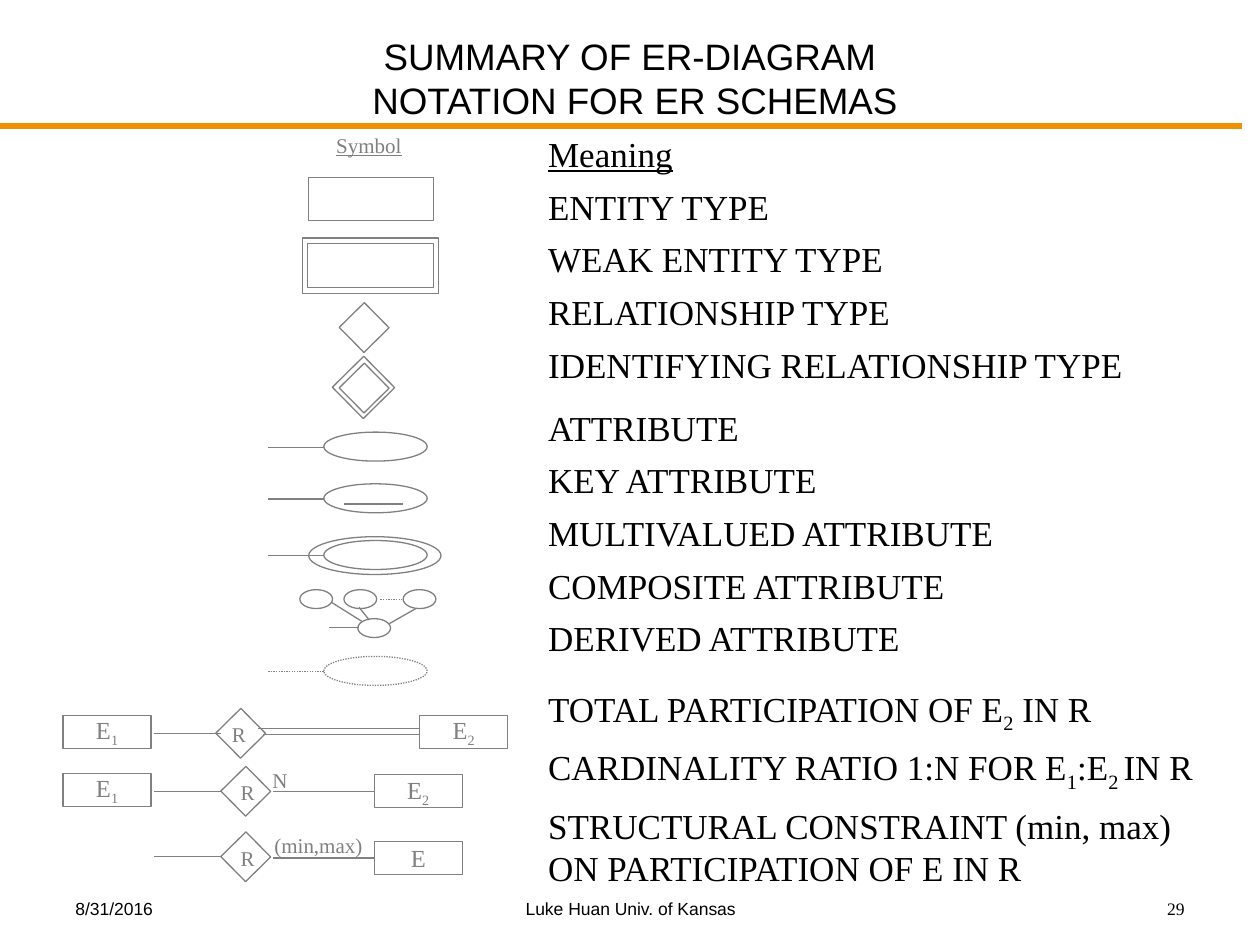
from lxml import etree
from pptx import Presentation
from pptx.dml.color import RGBColor
from pptx.enum.dml import MSO_LINE
from pptx.enum.shapes import MSO_CONNECTOR, MSO_SHAPE
from pptx.enum.text import MSO_ANCHOR, MSO_AUTO_SIZE, PP_ALIGN
from pptx.oxml.ns import qn
from pptx.util import Inches, Pt

RECT, OVAL = MSO_SHAPE.RECTANGLE, MSO_SHAPE.OVAL
STRAIGHT = MSO_CONNECTOR.STRAIGHT
DOTTED = MSO_LINE.ROUND_DOT
LEFT, CENTER, RIGHT = PP_ALIGN.LEFT, PP_ALIGN.CENTER, PP_ALIGN.RIGHT
LEFT_SIDE = 1
SANS, SERIF = "Arial", "Times New Roman"
COLORS = {"text": "000000", "symbol": "808080", "rule": "EF9100"}

ENTITY_SIZE = (0.7, 0.26)
OVAL_SIZE = (0.82, 0.23)
DIAMOND_SIDE = 0.28
SYMBOL_LEFT = 2.13
ROW_GAP, GROUP_GAP, WIDE_GAP = 6.1, 12.1, 16.1

# Text with subscripts between underscores, and points of space before
MEANINGS = [
    ("Meaning", ROW_GAP),
    ("ENTITY TYPE", ROW_GAP),
    ("WEAK ENTITY TYPE", ROW_GAP),
    ("RELATIONSHIP TYPE", ROW_GAP),
    ("IDENTIFYING RELATIONSHIP TYPE", ROW_GAP),
    ("ATTRIBUTE", GROUP_GAP),
    ("KEY ATTRIBUTE", ROW_GAP),
    ("MULTIVALUED ATTRIBUTE", ROW_GAP),
    ("COMPOSITE ATTRIBUTE", ROW_GAP),
    ("DERIVED ATTRIBUTE", ROW_GAP),
    ("TOTAL PARTICIPATION OF E_2_ IN R", WIDE_GAP),
    ("CARDINALITY RATIO 1:N FOR E_1_:E_2 _IN R", ROW_GAP),
    ("STRUCTURAL CONSTRAINT (min, max) ON PARTICIPATION OF E IN R", ROW_GAP),
]


def write(para, text, size, color="symbol", font=SERIF, align=LEFT):
    """Fill a paragraph, lowering the parts between underscores and breaking lines at newlines."""
    para.alignment = align
    para.font.size = Pt(size)
    para.font.name = font
    para.font.color.rgb = RGBColor.from_string(COLORS[color])
    for row, line in enumerate(text.split("\n")):
        if row:
            para.add_line_break()
        for index, part in enumerate(line.split("_")):
            if part:
                span = para.add_run()
                span.text = part
                if index % 2:
                    span._r.get_or_add_rPr().set("baseline", "-25000")


def place(shape, left, top, width, height):
    shape.left, shape.top = Inches(left), Inches(top)
    shape.width, shape.height = Inches(width), Inches(height)


def add_label(page, text, left, top, width, height, size=12, wrap=False, inset=0.05, **style):
    box = page.shapes.add_textbox(Inches(left), Inches(top), Inches(width), Inches(height))
    frame = box.text_frame
    frame.word_wrap = wrap
    frame.margin_top = frame.margin_bottom = Inches(inset)
    write(frame.paragraphs[0], text, size, **style)
    return box


def add_outline(page, kind, left, top, width, height, dash=None):
    shape = page.shapes.add_shape(kind, Inches(left), Inches(top), Inches(width), Inches(height))
    shape.shadow.inherit = False
    shape.fill.background()
    shape.line.color.rgb = RGBColor.from_string(COLORS["symbol"])
    shape.line.width = Pt(0.75)
    shape.line.dash_style = dash
    return shape


def add_line(page, x1, y1, x2, y2, dash=None, color="symbol", width=0.75):
    line = page.shapes.add_connector(STRAIGHT, Inches(x1), Inches(y1), Inches(x2), Inches(y2))
    line.line.color.rgb = RGBColor.from_string(COLORS[color])
    line.line.width = Pt(width)
    line.line.dash_style = dash
    etree.SubElement(line._element.spPr, qn("a:effectLst"))
    return line


def add_diamond(page, left, top, side=DIAMOND_SIDE):
    """A square turned on its corner; the box is that of the unturned square."""
    add_outline(page, RECT, left, top, side, side).rotation = 45.4


def add_entity(page, text, left, top):
    entity = add_outline(page, RECT, left, top, *ENTITY_SIZE)
    entity.text_frame.word_wrap = False
    entity.text_frame.vertical_anchor = MSO_ANCHOR.MIDDLE
    write(entity.text_frame.paragraphs[0], text, 14, align=CENTER)
    return entity


def draw_header(page, left, top, width, height):
    title = page.shapes.title
    place(title, left, top, width, height)
    frame = title.text_frame
    frame.auto_size = MSO_AUTO_SIZE.NONE
    frame.vertical_anchor = MSO_ANCHOR.MIDDLE
    frame.margin_top, frame.margin_bottom = 0, Inches(0.05)
    write(frame.paragraphs[0], "SUMMARY OF ER-DIAGRAM \nNOTATION FOR ER SCHEMAS", 21,
          color="text", font=SANS, align=CENTER)
    add_line(page, 0, 1, 9.86, 1, color="rule", width=3)


def draw_meanings(page, left, top, width, height):
    body = page.placeholders[1]
    place(body, left, top, width, height)
    frame = body.text_frame
    frame.auto_size = MSO_AUTO_SIZE.NONE
    for index, (text, gap) in enumerate(MEANINGS):
        para = frame.add_paragraph() if index else frame.paragraphs[0]
        para.space_before = Pt(gap)
        write(para, text, 20, color="text")
        props = para._p.get_or_add_pPr()
        props.set("marL", "0")
        props.set("indent", "0")
        props.insert_element_before(props.makeelement(qn("a:buNone"), {}), "a:tabLst", "a:defRPr")
    frame.paragraphs[0].font.underline = True


def draw_types(page, left, top):
    """Heading, entity and relationship symbols, plain and doubled."""
    heading = add_label(page, "Symbol", left + 0.17, top, 0.72, 0.2, inset=0)
    heading.text_frame.paragraphs[0].font.underline = True
    add_outline(page, RECT, left + 0.05, top + 0.36, 0.99, 0.34)
    add_outline(page, RECT, left + 0.04, top + 0.88, 1, 0.35)
    add_outline(page, RECT, left, top + 0.84, 1.08, 0.44)
    add_diamond(page, left + 0.35, top + 1.41)
    add_diamond(page, left + 0.35, top + 1.89)
    add_diamond(page, left + 0.31, top + 1.85, 0.35)


def draw_attribute(page, left, top, dash=None):
    add_outline(page, OVAL, left + 0.44, top, *OVAL_SIZE, dash=dash)
    add_line(page, left + 0.44, top + 0.12, left, top + 0.12, dash)


def draw_composite(page, left, top):
    for x, y in [(0, 0), (0.35, 0), (0.82, 0), (0.46, 0.23)]:
        add_outline(page, OVAL, left + x, top + y, 0.26, 0.15)
    for x1, y1, x2, y2, dash in [
        (0.47, 0.3, 0.23, 0.3, None),
        (0.25, 0.1, 0.49, 0.25, None),
        (0.47, 0.14, 0.55, 0.24, None),
        (0.71, 0.27, 0.92, 0.15, None),
        (0.64, 0.08, 0.81, 0.08, DOTTED),
    ]:
        add_line(page, left + x1, top + y1, left + x2, top + y2, dash)


def draw_attributes(page, left, top):
    for drop, dash in [(0, None), (0.41, None), (0.86, None), (1.78, DOTTED)]:
        draw_attribute(page, left, top + drop, dash)
    add_line(page, left + 0.6, top + 0.57, left + 1.07, top + 0.57)
    add_outline(page, OVAL, left + 0.32, top + 0.83, 1.05, 0.3)
    draw_composite(page, left + 0.25, top + 1.25)


def draw_relationship(page, left, top, diamond_x, letter_x):
    """Stem, diamond and its letter, shared by the three bottom rows."""
    add_line(page, left + 0.72, top + 0.14, left + 1.25, top + 0.14)
    add_diamond(page, left + diamond_x, top)
    add_label(page, "R", left + letter_x, top, 0.31, 0.3, align=RIGHT)


def draw_total_participation(page, left, top):
    add_entity(page, "E_1", left, top)
    draw_relationship(page, left, top, 1.27, 1.24)
    add_line(page, left + 1.55, top + 0.1, left + 2.83, top + 0.1)
    add_line(page, left + 1.59, top + 0.15, left + 2.83, top + 0.15)
    add_entity(page, "E_2", left + 2.83, top)


def draw_constraint(page, left, top, name, entity_drop):
    draw_relationship(page, left, top, 1.31, 1.31)
    entity = add_entity(page, name, left + 2.47, top + entity_drop)
    middle = top + entity_drop + ENTITY_SIZE[1] / 2
    line = add_line(page, left + 1.67, middle, left + 2.47, middle)
    line.end_connect(entity, LEFT_SIDE)


def draw_participations(page, left, top):
    draw_total_participation(page, left, top)
    add_entity(page, "E_1", left, top + 0.46)
    draw_constraint(page, left, top + 0.46, "E_2", 0.01)
    add_label(page, "N", left + 1.56, top + 0.36, 0.32, 0.3, align=RIGHT)
    draw_constraint(page, left, top + 0.98, "E", 0.02)
    add_label(page, "(min,max)", left + 1.58, top + 0.88, 0.9, 0.3)


def draw_footer(page, top, height):
    for text, left, width, font, align in [
        ("8/31/2016", 0.5, 2.33, SANS, LEFT),
        ("Luke Huan Univ. of Kansas", 3.42, 3.17, SANS, CENTER),
        ("29", 7.17, 2.33, SERIF, RIGHT),
    ]:
        add_label(page, text, left, top, width, height, size=10, wrap=True,
                  color="text", font=font, align=align)


def main():
    deck = Presentation()
    deck.slide_width, deck.slide_height = Inches(10), Inches(7.5)
    page = deck.slides.add_slide(deck.slide_layouts[1])
    draw_header(page, 0.08, 0.07, 9.92, 1.15)
    draw_meanings(page, 4.25, 1, 5.42, 6.24)
    draw_types(page, 2.4, 1.05)
    draw_attributes(page, SYMBOL_LEFT, 3.43)
    draw_participations(page, 0.5, 5.68)
    draw_footer(page, 7.08, 0.25)
    deck.save("out.pptx")


if __name__ == "__main__":
    main()
